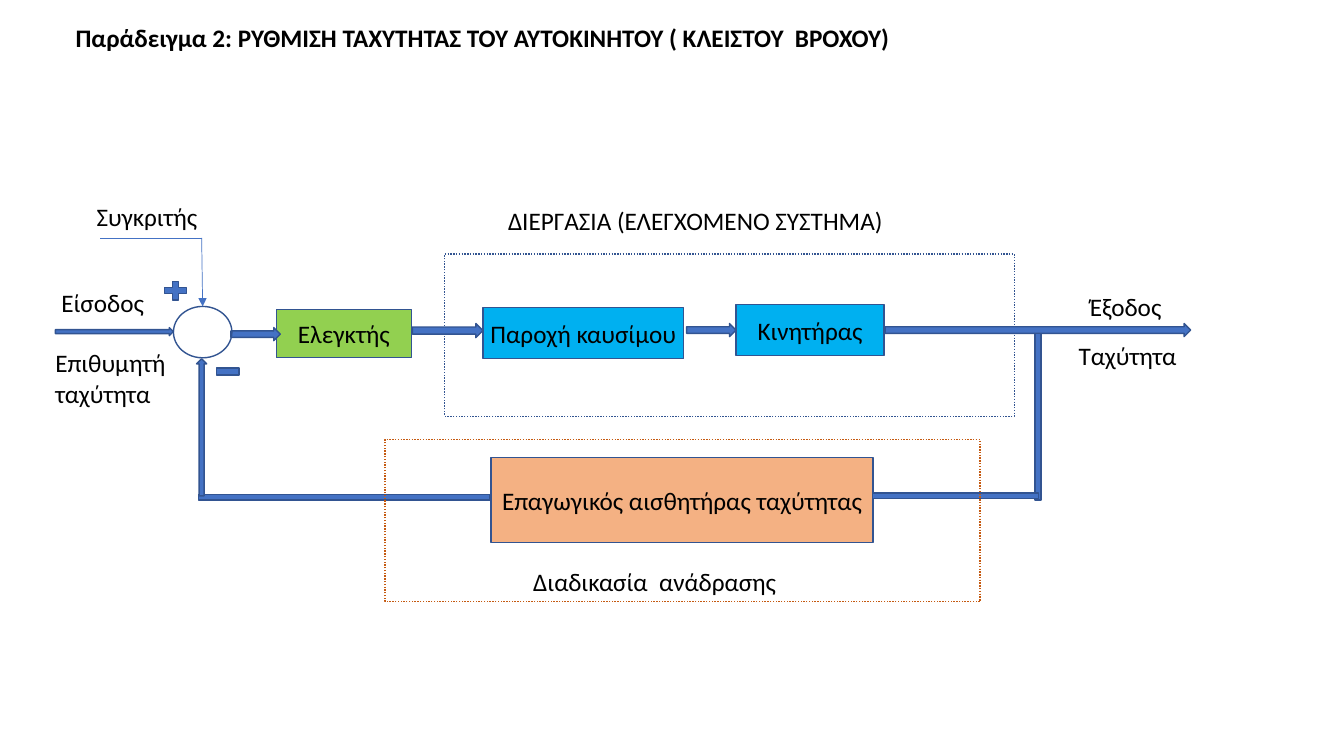
from dataclasses import dataclass

from lxml.etree import SubElement
from pptx import Presentation
from pptx.dml.color import RGBColor
from pptx.enum.dml import MSO_LINE as Dash
from pptx.enum.shapes import MSO_CONNECTOR as Link, MSO_SHAPE as Kind
from pptx.enum.text import MSO_ANCHOR as Anchor, MSO_AUTO_SIZE as Fit, PP_ALIGN as Align
from pptx.oxml.ns import qn
from pptx.util import Inches, Pt

COLORS = {
    "ink": "000000", "edge": "325491", "blue": "4472C4", "cyan": "00B0F0",
    "green": "92D050", "peach": "F4B183", "rust": "C55A11",
}


@dataclass
class Part:
    kind: Kind
    left: float
    top: float
    width: float
    height: float
    fill: str | None = "blue"
    text: str = ""
    edge: str = "edge"
    dotted: bool = False
    turn: int = 0


@dataclass
class Label:
    text: str
    left: float
    top: float
    width: float
    height: float = 0.4


PARTS = [
    # Process: controlled system
    Part(Kind.RECTANGLE, 4.79, 3.05, 1.99, 0.51, "cyan", "Παροχή καυσίμου"),
    Part(Kind.RECTANGLE, 7.3, 3.02, 1.47, 0.51, "cyan", "Κινητήρας"),
    Part(Kind.RECTANGLE, 4.41, 2.52, 5.65, 1.61, None, dotted=True),
    # Forward path
    Part(Kind.RIGHT_ARROW, 0.55, 3.25, 1.17, 0.08),
    Part(Kind.RIGHT_ARROW, 6.81, 3.21, 0.49, 0.13),
    Part(Kind.RIGHT_ARROW, 8.78, 3.21, 3.03, 0.13),
    Part(Kind.RECTANGLE, 2.74, 3.07, 1.34, 0.48, "green", "Ελεγκτής"),
    Part(Kind.RIGHT_ARROW, 4.09, 3.21, 0.7, 0.14),
    # Feedback path
    Part(Kind.MATH_MINUS, 9.17, 4.01, 2.25, 0.25, turn=90),
    Part(Kind.MATH_MINUS, 1.45, 4.82, 3.93, 0.23),
    Part(Kind.UP_ARROW, 1.95, 3.56, 0.1, 1.36),
    Part(Kind.RIGHT_ARROW, 2.29, 3.25, 0.49, 0.13),
    # Signs at the comparator
    Part(Kind.MATH_PLUS, 1.59, 2.76, 0.3, 0.25),
    Part(Kind.MATH_MINUS, 2.11, 3.54, 0.3, 0.29),
    # Sensor
    Part(Kind.RECTANGLE, 4.87, 4.54, 3.79, 0.84, "peach",
         "Επαγωγικός αισθητήρας ταχύτητας"),
    Part(Kind.MATH_MINUS, 8.36, 4.8, 2.24, 0.24),
    Part(Kind.RECTANGLE, 3.82, 4.36, 5.9, 1.61, None, edge="rust", dotted=True),
]
RING = Part(Kind.OVAL, 1.72, 3.04, 0.58, 0.51, None)

LABELS = [
    Label("ΔΙΕΡΓΑΣΙΑ (ΕΛΕΓΧΟΜΕΝΟ ΣΥΣΤΗΜΑ)", 4.94, 1.99, 3.92),
    Label("Έξοδος", 10.71, 2.84, 0.92),
    Label("Ταχύτητα", 10.6, 3.33, 1.18),
    Label("Επιθυμητή\nταχύτητα", 0.45, 3.4, 1.37, 0.71),
    Label("Είσοδος", 0.51, 2.8, 1.03),
    Label("Συγκριτής", 0.86, 1.95, 1.27),
    Label("Διαδικασία  ανάδρασης", 5.19, 5.57, 2.61),
]


def paint(name: str) -> RGBColor:
    return RGBColor.from_string(COLORS[name])


def write(frame, text: str, *, bold=False, align=Align.LEFT, anchor=Anchor.TOP,
          wrap=False) -> None:
    frame.text = text
    frame.word_wrap = wrap
    frame.auto_size = Fit.NONE
    frame.vertical_anchor = anchor
    for para in frame.paragraphs:
        para.alignment = align
        font = para.font
        font.name, font.size, font.bold = "Calibri", Pt(18), bold
        font.color.rgb = paint("ink")


def add_part(shapes, part: Part):
    box = (part.left, part.top, part.width, part.height)
    shape = shapes.add_shape(part.kind, *map(Inches, box))
    shape.shadow.inherit = False
    shape.rotation = part.turn
    if part.fill:
        shape.fill.solid()
        shape.fill.fore_color.rgb = paint(part.fill)
    else:
        shape.fill.background()
    shape.line.width = Pt(1)
    shape.line.color.rgb = paint(part.edge)
    if part.dotted:
        shape.line.dash_style = Dash.ROUND_DOT
    if part.text:
        write(shape.text_frame, part.text, align=Align.CENTER, anchor=Anchor.MIDDLE)
    return shape


def add_label(shapes, label: Label) -> None:
    box = (label.left, label.top, label.width, label.height)
    write(shapes.add_textbox(*map(Inches, box)).text_frame, label.text)


def add_line(shapes, start: tuple[float, float], end: tuple[float, float]):
    line = shapes.add_connector(Link.STRAIGHT, *map(Inches, start + end))
    line.line.width = Pt(0.5)
    line.line.color.rgb = paint("blue")
    SubElement(line._element.spPr, qn("a:effectLst"))
    return line


def main() -> None:
    deck = Presentation()
    deck.slide_width, deck.slide_height = Inches(13.33), Inches(7.5)
    shapes = deck.slides.add_slide(deck.slide_layouts[5]).shapes

    title = shapes.title
    title.left, title.top = Inches(0.65), Inches(0.17)
    title.width, title.height = Inches(12.55), Inches(0.4)
    write(title.text_frame,
          "Παράδειγμα 2: ΡΥΘΜΙΣΗ ΤΑΧΥΤΗΤΑΣ ΤΟΥ ΑΥΤΟΚΙΝΗΤΟΥ ( ΚΛΕΙΣΤΟΥ  ΒΡΟΧΟΥ)",
          bold=True, wrap=True)

    for part in PARTS:
        add_part(shapes, part)
    ring = add_part(shapes, RING)
    for label in LABELS:
        add_label(shapes, label)

    bend = (2, 2.36)
    add_line(shapes, bend, (0.99, 2.36))
    arrow = add_line(shapes, bend, (2.01, 3.04))
    arrow.end_connect(ring, 0)
    SubElement(arrow.line._get_or_add_ln(), qn("a:tailEnd"), type="triangle")

    deck.save("out.pptx")


if __name__ == "__main__":
    main()
